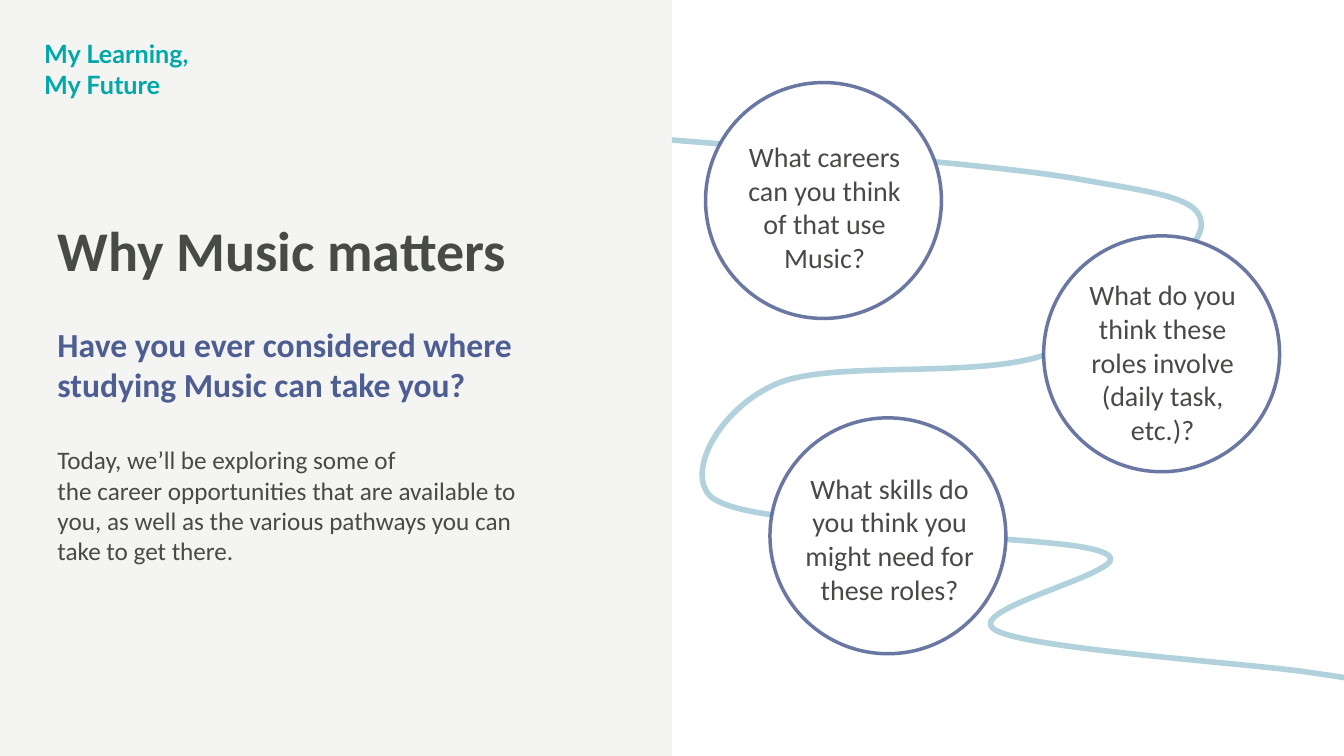
from lxml.etree import SubElement as Sub
from pptx import Presentation
from pptx.dml.color import RGBColor
from pptx.enum.shapes import MSO_SHAPE as Kind
from pptx.enum.text import MSO_ANCHOR as Anchor, MSO_AUTO_SIZE as Auto, PP_ALIGN as Align
from pptx.oxml.ns import qn
from pptx.util import Pt

INK, BLUE, TEAL, WHITE = "484A47", "4E5E92", "00A8A8", "FEFFFE"


def paint(part, tint, alpha=100):
    part.solid()
    part.fore_color.rgb = RGBColor.from_string(tint)
    if alpha < 100:
        node = part._xPr.find(qn("a:solidFill"))[0]
        Sub(node, qn("a:alpha")).set("val", str(alpha * 1000))


def write(shape, box, rows, align=Align.LEFT):
    shape.left, shape.top, shape.width, shape.height = [Pt(n) for n in box]
    frame = shape.text_frame
    frame.word_wrap = True
    frame.auto_size = Auto.NONE
    frame.vertical_anchor = Anchor.TOP
    frame.text = "\n".join(row[0] for row in rows)
    for para, (text, face, size, bold, tint, gap) in zip(frame.paragraphs, rows):
        para.alignment = align
        para.line_spacing = 1.0
        para.space_before = Pt(gap)
        for run in para.runs:
            run.font.name = face
            run.font.size = Pt(size)
            run.font.bold = bold
            run.font.color.rgb = RGBColor.from_string(tint)


deck = Presentation()
deck.slide_width, deck.slide_height = Pt(960), Pt(540)
slide = deck.slides.add_slide(deck.slide_layouts[5])
shapes = slide.shapes
paint(slide.background.fill, WHITE)

panel = shapes.add_shape(Kind.RECTANGLE, 0, 0, Pt(480), Pt(540))
panel.shadow.inherit = False
paint(panel.fill, "E0DEDA", 30)
panel.line.fill.background()

bends = [
    (591, 109), (702, 117), (765, 127),
    (827, 138), (860, 141), (858, 162),
    (855, 183), (798, 234), (748, 253),
    (698, 271), (595, 257), (555, 274),
    (515, 291), (490, 336), (507, 354),
    (524, 371), (611, 372), (660, 379),
    (707, 387), (784, 386), (793, 398),
    (801, 410), (686, 436), (711, 450),
    (735, 464), (898, 474), (940, 481),
    (983, 487), (975, 488), (966, 489),
]
pen = shapes.build_freeform(480, 100, scale=Pt(1))
pen.add_line_segments(bends, close=False)
road = pen.convert_to_shape()
road.shadow.inherit = False
paint(road.fill, WHITE)
road.line.width = Pt(4)
paint(road.line.fill, "006992", 30)
route = next(road._element.iter(qn("a:path")))
legs = route.findall(qn("a:lnTo"))
for i in range(0, len(legs), 3):
    curve = Sub(route, qn("a:cubicBezTo"))
    for leg in legs[i:i + 3]:
        curve.append(leg[0])
        route.remove(leg)

asks = [
    (504, 59, (526, 96, 126, 104), "What careers can you think of that use Music?"),
    (745.5, 168.5, (756, 195, 149, 128), "What do you think these roles involve (daily task, etc.)?"),
    (550, 298.5, (566, 333, 139, 104), "What skills do you think you might need for these roles?"),
]
for left, top, box, text in asks:
    disc = shapes.add_shape(Kind.OVAL, Pt(left), Pt(top), Pt(168.5), Pt(168.5))
    disc.shadow.inherit = False
    paint(disc.fill, WHITE)
    disc.line.width = Pt(2.5)
    paint(disc.line.fill, BLUE, 84)
    label = shapes.add_textbox(0, 0, 0, 0)
    write(label, box, [(text, "Calibri", 20, False, INK, 0)], Align.CENTER)

brand = shapes.add_textbox(0, 0, 0, 0)
write(brand, (24.5, 24, 128, 51), [
    ("My Learning,", "Lato", 18, True, TEAL, 0),
    ("My Future", "Lato", 18, True, TEAL, 0),
])

title = shapes.title
write(title, (34, 150.5, 412, 55.5), [("Why Music matters", "Calibri", 40, True, INK, 0)])
shapes._spTree.append(title._element)

intro = shapes.add_textbox(0, 0, 0, 0)
write(intro, (34, 227.5, 371.5, 181.5), [
    ("Have you ever considered where studying Music can take you?", "Calibri", 24, True, BLUE, 0),
    ("Today, we’ll be exploring some of \vthe career opportunities that are available to you, "
     "as well as the various pathways you can take to get there.", "Calibri", 18, False, INK, 29),
])

deck.save("out.pptx")
